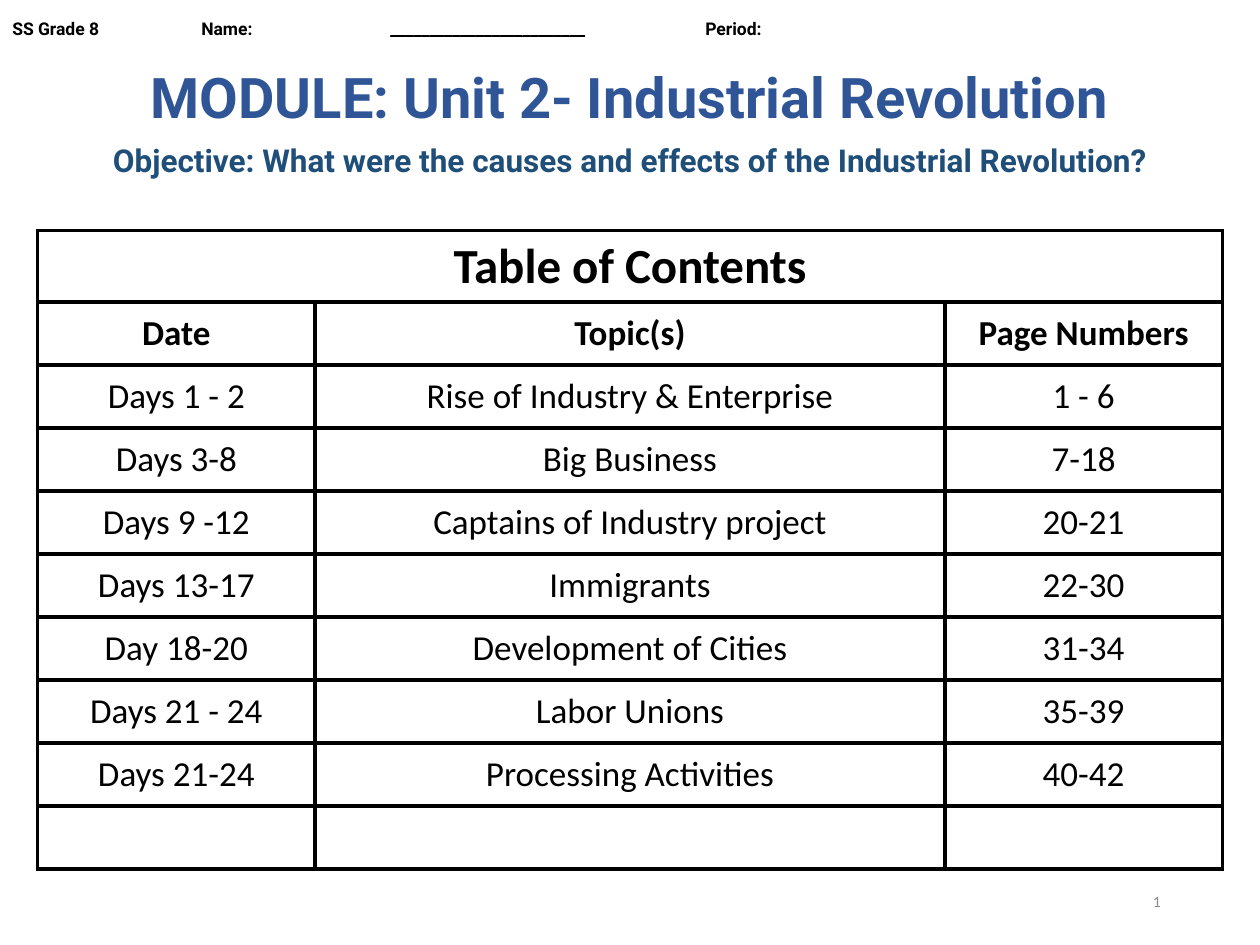
from lxml.etree import SubElement
from pptx import Presentation
from pptx.dml.color import RGBColor
from pptx.enum.text import MSO_ANCHOR, MSO_AUTO_SIZE, PP_ALIGN
from pptx.oxml.ns import qn
from pptx.util import Cm, Pt

HEADINGS = ("Date", "Topic(s)", "Page Numbers")
CONTENTS = [
    ("Days 1 - 2", "Rise of Industry & Enterprise", "1 - 6"),
    ("Days 3-8", "Big Business", "7-18"),
    ("Days 9 -12", "Captains of Industry project", "20-21"),
    ("Days 13-17", "Immigrants", "22-30"),
    ("Day 18-20", "Development of Cities", "31-34"),
    ("Days 21 - 24", "Labor Unions", "35-39"),
    ("Days 21-24", "Processing Activities", "40-42"),
    ("", "", ""),
]
COLUMN_WIDTHS = (5.59, 12.7, 5.59)
TITLE_ROW_HEIGHT, ROW_HEIGHT = 1.43, 1.27
SLIDE_WIDTH = 25.4


def color(hex_string):
    return RGBColor.from_string(hex_string)


def format_font(font, hex_color, **values):
    font.color.rgb = color(hex_color)
    for name, value in values.items():
        setattr(font, name, value)


def place(shape, left, top, width, height):
    box = {"left": left, "top": top, "width": width, "height": height}
    for name, value in box.items():
        setattr(shape, name, Cm(value))


def fill_placeholder(shape, text, box, hex_color, size):
    """Put one centred bold line into a template placeholder."""
    place(shape, *box)
    frame = shape.text_frame
    frame.text = text
    settings = {"word_wrap": True, "auto_size": MSO_AUTO_SIZE.NONE,
                "vertical_anchor": MSO_ANCHOR.MIDDLE}
    for name, value in settings.items():
        setattr(frame, name, value)
    paragraph = frame.paragraphs[0]
    paragraph.alignment = PP_ALIGN.CENTER
    paragraph.space_before = Pt(0)
    format_font(paragraph.runs[0].font, hex_color, name="Roboto", size=Pt(size), bold=True)


def add_text_box(slide, *box):
    shape = slide.shapes.add_textbox(*(Cm(value) for value in box))
    shape.text_frame.word_wrap = True
    return shape.text_frame


def add_student_line(slide):
    """Class, name and period, set apart by tab stops."""
    paragraph = add_text_box(slide, 0, 0.23, SLIDE_WIDTH, 0.7).paragraphs[0]
    for text, underline in (("SS Grade 8\tName:\t", False), ("_" * 25, True), ("\tPeriod:", False)):
        run = paragraph.add_run()
        run.text = text
        format_font(run.font, "000000", name="Roboto", size=Pt(10), bold=True, underline=underline)
    tab_list = SubElement(paragraph._p.get_or_add_pPr(), qn("a:tabLst"))
    for position in (3.81, 7.62, 13.97):
        SubElement(tab_list, qn("a:tab"), pos=str(Cm(position)), algn="l")


def add_borders(cell):
    properties = cell._tc.get_or_add_tcPr()
    for side in ("lnL", "lnR", "lnT", "lnB"):
        line = SubElement(properties, qn(f"a:{side}"), w=str(Pt(2.25)))
        fill = SubElement(line, qn("a:solidFill"))
        SubElement(fill, qn("a:srgbClr"), val="000000")


def fill_cell(cell, text, size, bold):
    add_borders(cell)
    cell.fill.background()
    cell.vertical_anchor = MSO_ANCHOR.MIDDLE
    if text:
        cell.text = text
        paragraph = cell.text_frame.paragraphs[0]
        paragraph.alignment = PP_ALIGN.CENTER
        format_font(paragraph.runs[0].font, "000000", name="Calibri", size=Pt(size), bold=bold)


def add_contents_table(slide):
    rows = [("Table of Contents", "", ""), HEADINGS, *CONTENTS]
    heights = [TITLE_ROW_HEIGHT] + [ROW_HEIGHT] * (len(rows) - 1)
    table = slide.shapes.add_table(
        len(rows), len(COLUMN_WIDTHS), Cm(0.76), Cm(4.65),
        Cm(sum(COLUMN_WIDTHS)), Cm(sum(heights))).table
    for column, width in zip(table.columns, COLUMN_WIDTHS):
        column.width = Cm(width)
    for row, height in zip(table.rows, heights):
        row.height = Cm(height)
    table.cell(0, 0).merge(table.cell(0, len(COLUMN_WIDTHS) - 1))
    for row_index, texts in enumerate(rows):
        for column_index, text in enumerate(texts):
            fill_cell(table.cell(row_index, column_index), text,
                      size=28 if row_index == 0 else 20, bold=row_index < 2)


def add_page_number(slide):
    frame = add_text_box(slide, 17.93, 17.65, 5.72, 1.02)
    frame.vertical_anchor = MSO_ANCHOR.MIDDLE
    paragraph = frame.paragraphs[0]
    paragraph.alignment = PP_ALIGN.RIGHT
    run = paragraph.add_run()
    run.text = "1"
    format_font(run.font, "8C8C8C", name="Calibri", size=Pt(9))


def main():
    presentation = Presentation()
    presentation.slide_width = Cm(SLIDE_WIDTH)
    presentation.slide_height = Cm(19.05)
    slide = presentation.slides.add_slide(presentation.slide_layouts[0])

    # Heading
    add_student_line(slide)
    fill_placeholder(slide.shapes.title, "MODULE: Unit 2- Industrial Revolution",
                     (0, 1.17, SLIDE_WIDTH, 1.52), "2F5597", 32)
    fill_placeholder(slide.placeholders[1],
                     "Objective: What were the causes and effects of the Industrial Revolution?",
                     (0, 2.72, SLIDE_WIDTH, 1.02), "1F4E79", 18)

    # Contents and page number
    add_contents_table(slide)
    add_page_number(slide)
    presentation.save("out.pptx")


if __name__ == "__main__":
    main()
